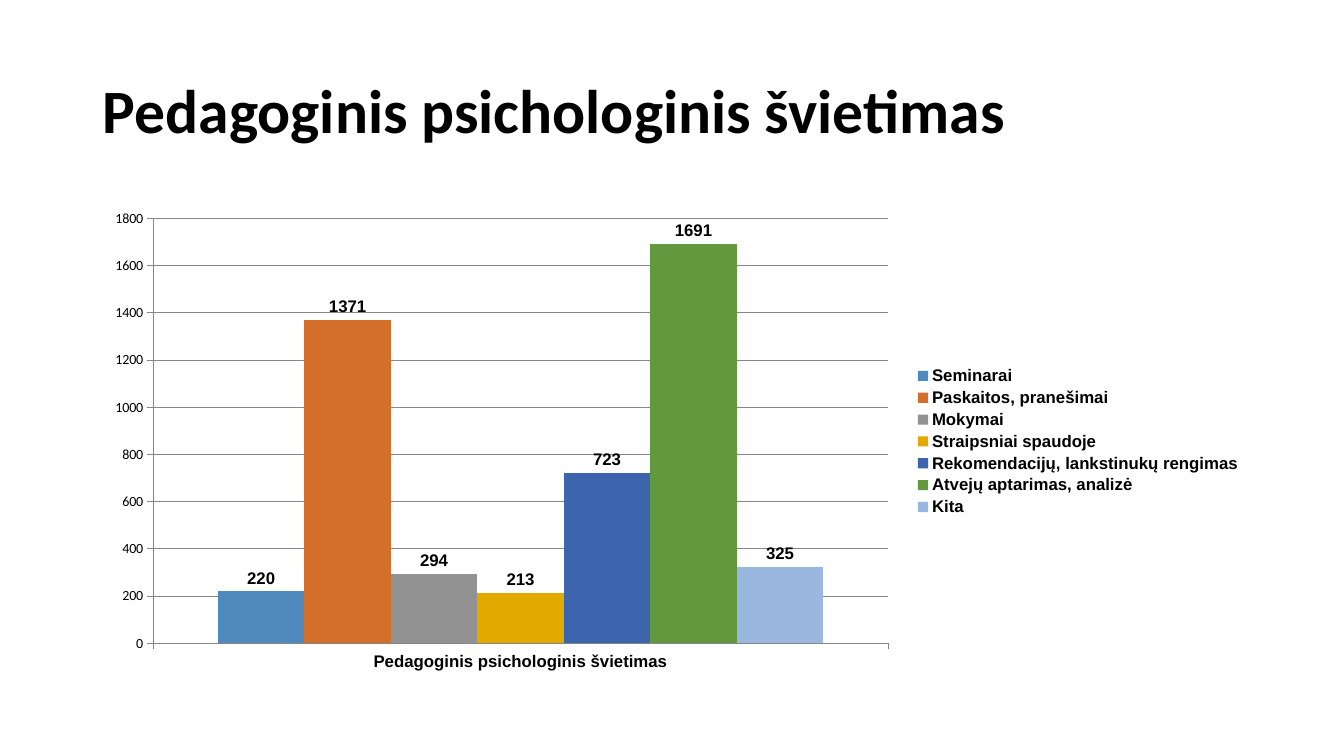
from dataclasses import dataclass

from lxml import etree
from pptx import Presentation
from pptx.chart.chart import Chart
from pptx.chart.data import CategoryChartData
from pptx.dml.color import RGBColor
from pptx.enum.chart import XL_CHART_TYPE, XL_LABEL_POSITION, XL_LEGEND_POSITION, XL_TICK_MARK
from pptx.enum.text import MSO_ANCHOR, MSO_AUTO_SIZE, PP_ALIGN
from pptx.oxml.ns import qn
from pptx.slide import Slide
from pptx.text.text import Font
from pptx.util import Inches, Pt

COLUMN = XL_CHART_TYPE.COLUMN_CLUSTERED
ABOVE = XL_LABEL_POSITION.OUTSIDE_END
RIGHT = XL_LEGEND_POSITION.RIGHT
OUT = XL_TICK_MARK.OUTSIDE
LEFT = PP_ALIGN.LEFT
MIDDLE = MSO_ANCHOR.MIDDLE
NO_FIT = MSO_AUTO_SIZE.NONE

BLACK = RGBColor(0x00, 0x00, 0x00)
GREY = RGBColor(0x86, 0x86, 0x86)
BLUE = RGBColor(0x50, 0x8A, 0xBC)
ORANGE = RGBColor(0xD3, 0x6F, 0x2B)
SILVER = RGBColor(0x92, 0x92, 0x92)
GOLD = RGBColor(0xE2, 0xAA, 0x00)
NAVY = RGBColor(0x3D, 0x65, 0xAE)
GREEN = RGBColor(0x63, 0x99, 0x3E)
PALE = RGBColor(0x9A, 0xB7, 0xDF)

TOPIC = "Pedagoginis psichologinis švietimas"
EDGE = Inches(0.92)
WIDTH = Inches(11.5)


@dataclass(frozen=True)
class Bar:
    name: str
    count: int
    color: RGBColor


BARS = [
    Bar("Seminarai", 220, BLUE),
    Bar("Paskaitos, pranešimai", 1371, ORANGE),
    Bar("Mokymai", 294, SILVER),
    Bar("Straipsniai spaudoje", 213, GOLD),
    Bar("Rekomendacijų, lankstinukų rengimas", 723, NAVY),
    Bar("Atvejų aptarimas, analizė", 1691, GREEN),
    Bar("Kita", 325, PALE),
]


def set_font(font: Font, name: str, size: int, bold: bool) -> None:
    font.name = name
    font.size = Pt(size)
    font.bold = bold
    font.color.rgb = BLACK


def add_title(slide: Slide) -> None:
    title = slide.shapes.title
    title.left, title.top = EDGE, Inches(0.4)
    title.width, title.height = WIDTH, Inches(1.45)
    frame = title.text_frame
    frame.auto_size = NO_FIT
    frame.word_wrap = True
    frame.vertical_anchor = MIDDLE
    para = frame.paragraphs[0]
    para.alignment = LEFT
    para.line_spacing = 0.9
    run = para.add_run()
    run.text = TOPIC
    set_font(run.font, "Calibri", 44, True)


def place_plot(chart: Chart) -> None:
    """Fix the inner plot area, in fractions of the chart frame."""
    area = chart._chartSpace.chart.plotArea
    for old in area.findall(qn("c:layout")):
        area.remove(old)
    layout = etree.Element(qn("c:layout"))
    manual = etree.SubElement(layout, qn("c:manualLayout"))
    rules = {"layoutTarget": "inner", "xMode": "edge", "yMode": "edge",
             "x": "0.052", "y": "0.035", "w": "0.634", "h": "0.886"}
    for tag, val in rules.items():
        etree.SubElement(manual, qn(f"c:{tag}")).set("val", val)
    area.insert(0, layout)


def style_axes(chart: Chart) -> None:
    cat, val = chart.category_axis, chart.value_axis
    for axis in (cat, val):
        axis.major_tick_mark = OUT
        axis.format.line.color.rgb = GREY
        axis.format.line.width = Pt(0.75)
    set_font(cat.tick_labels.font, "Arial", 12, True)
    set_font(val.tick_labels.font, "Calibri", 10, False)
    val.minimum_scale, val.maximum_scale, val.major_unit = 0, 1800, 200
    val.has_major_gridlines = True
    grid = val.major_gridlines.format.line
    grid.color.rgb = GREY
    grid.width = Pt(0.75)


def add_bars(slide: Slide) -> None:
    data = CategoryChartData()
    data.categories = [TOPIC]
    for bar in BARS:
        data.add_series(bar.name, [bar.count])
    frame = slide.shapes.add_chart(COLUMN, EDGE, Inches(2), WIDTH, Inches(4.76), data)
    chart = frame.chart
    set_font(chart.font, "Calibri", 10, False)
    chart.has_title = False
    chart.has_legend = True
    chart.legend.position = RIGHT
    chart.legend.include_in_layout = False
    set_font(chart.legend.font, "Arial", 12, True)
    style_axes(chart)
    place_plot(chart)

    plot = chart.plots[0]
    plot.gap_width = 150
    plot.overlap = 0
    plot.vary_by_categories = False
    for bar, series in zip(BARS, plot.series):
        series.format.fill.solid()
        series.format.fill.fore_color.rgb = bar.color
        series.invert_if_negative = False
        labels = series.data_labels
        labels.show_value = True
        labels.position = ABOVE
        set_font(labels.font, "Arial", 12, True)


def main() -> None:
    deck = Presentation()
    deck.slide_width, deck.slide_height = Inches(13.33), Inches(7.5)
    slide = deck.slides.add_slide(deck.slide_layouts[5])
    add_title(slide)
    add_bars(slide)
    deck.save("out.pptx")


if __name__ == "__main__":
    main()
